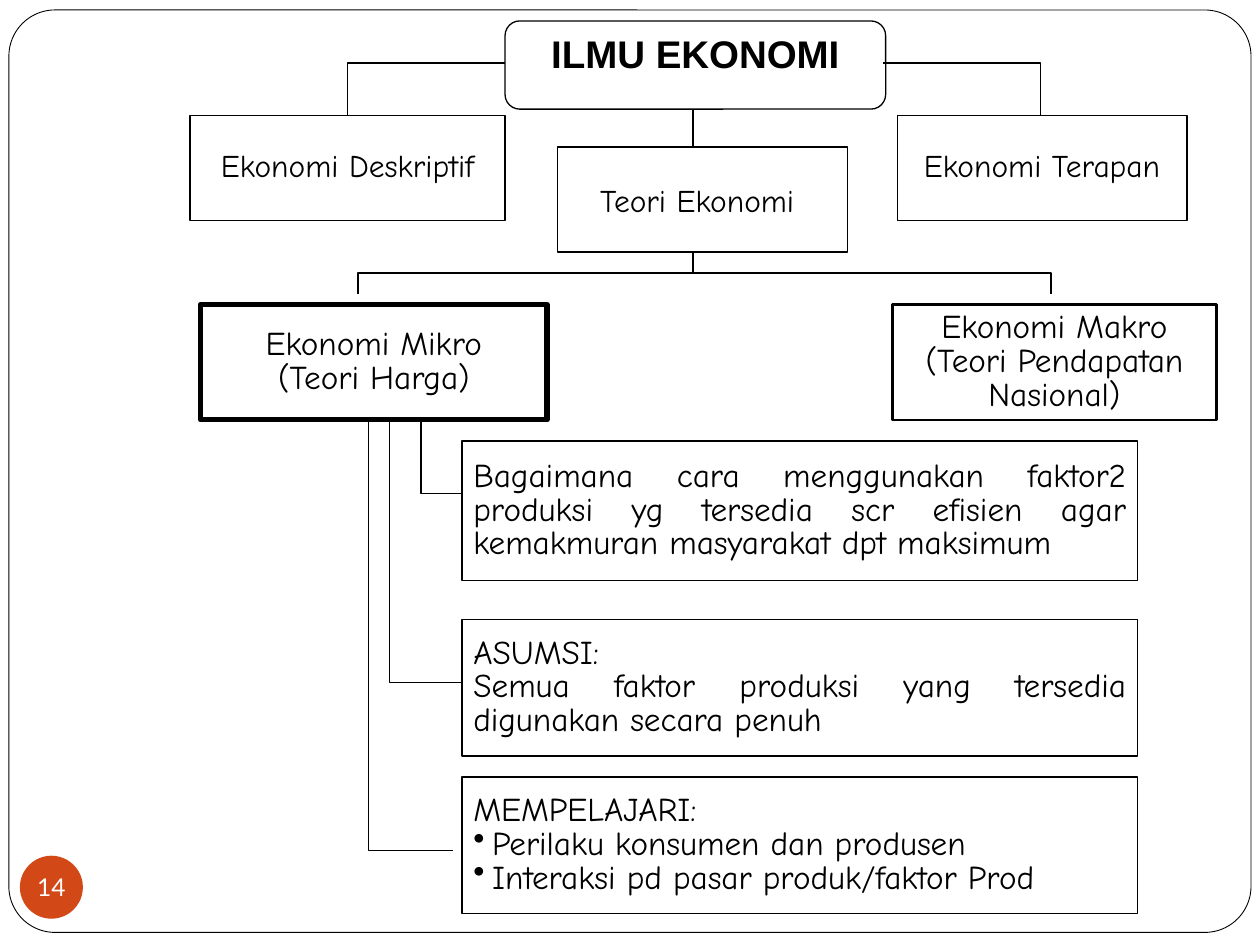
from lxml import etree
from pptx import Presentation
from pptx.dml.color import RGBColor
from pptx.enum.shapes import MSO_CONNECTOR, MSO_SHAPE
from pptx.enum.text import MSO_ANCHOR, PP_ALIGN
from pptx.oxml.ns import qn
from pptx.util import Inches, Pt

RECTANGLE, ROUNDED, OVAL = MSO_SHAPE.RECTANGLE, MSO_SHAPE.ROUNDED_RECTANGLE, MSO_SHAPE.OVAL
TOP, MIDDLE = MSO_ANCHOR.TOP, MSO_ANCHOR.MIDDLE
CENTER, JUSTIFY = PP_ALIGN.CENTER, PP_ALIGN.JUSTIFY

THEME = {
    "ink": RGBColor(0, 0, 0),
    "paper": RGBColor(255, 255, 255),
    "accent": RGBColor(0xD3, 0x48, 0x17),
    "title": ("Arial", 22),
    "branch": ("Comic Neue", 18),
    "topic": ("Comic Neue", 19),
    "number": ("Lato", 14),
    "tight": 0.85,
}

# Positions are in grid cells: the slide is 120 columns by 90 rows.
COLUMNS, ROWS = 120, 90
SLIDE_WIDTH, SLIDE_HEIGHT = Inches(10), Inches(7.5)

FRAME = (0.85, 0.95, 118.3, 87.85)
BADGE = (1.9, 81.5, 6, 6)
PAGE_NUMBER = "14"
ROOT = ("ILMU EKONOMI", (48.1, 2, 36.25, 8.4))
BULLET = "• "

# text lines, (column, row, width, height), line spacing
BRANCHES = [
    (["Ekonomi Deskriptif"], (18.1, 11, 30, 10), THEME["tight"]),
    (["Teori Ekonomi "], (53.1, 14, 27.6, 10), None),
    (["Ekonomi Terapan"], (85.45, 11, 27.6, 10), THEME["tight"]),
]
# text lines, (column, row, width, height), line width
THEORIES = [
    (["Ekonomi Mikro", "(Teori Harga)"], (19.1, 29, 33, 11), 3),
    (["Ekonomi Makro", "(Teori Pendapatan Nasional)"], (85, 29, 30.85, 11), 1.5),
]
# text lines, top row, height
DETAIL_COLUMN, DETAIL_WIDTH = 44, 64.35
DETAILS = [
    (["Bagaimana cara menggunakan faktor2 produksi yg tersedia scr efisien "
      "agar kemakmuran masyarakat dpt maksimum "], 42, 13.3),
    (["ASUMSI:", "Semua faktor produksi yang tersedia digunakan secara penuh"], 59, 13),
    (["MEMPELAJARI:", BULLET + "Perilaku konsumen dan produsen",
      BULLET + "Interaksi pd pasar produk/faktor Prod"], 74, 13),
]

STEM = ((66, 10), (66, 26))
ELBOWS = [
    [(33.1, 11), (33.1, 6), (48.1, 6)],
    [(99.1, 11), (99.1, 6), (84.1, 6)],
    [(34.1, 28), (34.1, 26), (100.1, 26), (100.1, 28)],
]
# column of the drop, row of the turn, column of the end
DROPS = [(40.1, 47, 44), (37.1, 65, 44), (35.1, 81, 43.1)]
ELBOWS += [[(column, 40), (column, row), (end, row)] for column, row, end in DROPS]


def across(columns):
    return round(SLIDE_WIDTH * columns / COLUMNS)


def down(rows):
    return round(SLIDE_HEIGHT * rows / ROWS)


def add_box(slide, preset, cell, fill="paper", line_width=None):
    left, top, width, height = cell
    shape = slide.shapes.add_shape(preset, across(left), down(top), across(width), down(height))
    shape.shadow.inherit = False
    shape.fill.solid()
    shape.fill.fore_color.rgb = THEME[fill]
    if line_width is None:
        shape.line.fill.background()
    else:
        shape.line.color.rgb = THEME["ink"]
        shape.line.width = Pt(line_width)
    return shape


def write(shape, lines, style, color="ink", alignment=CENTER, anchor=MIDDLE,
          spacing=None, bold=False):
    """Fill a shape with paragraphs; lines that start with BULLET become bullets."""
    frame = shape.text_frame
    frame.word_wrap = True
    frame.vertical_anchor = anchor
    frame.margin_left = frame.margin_right = Inches(0.09)
    frame.margin_top = frame.margin_bottom = Inches(0.04)
    frame.text = "\n".join(line.removeprefix(BULLET) for line in lines)
    has_bullets = any(line.startswith(BULLET) for line in lines)
    for line, paragraph in zip(lines, frame.paragraphs):
        paragraph.alignment = alignment
        if spacing:
            paragraph.line_spacing = spacing
        if has_bullets:
            properties = paragraph._p.get_or_add_pPr()
            properties.set("marL", str(Inches(0.15)))
            properties.set("indent", str(-Inches(0.15)))
            if line.startswith(BULLET):
                etree.SubElement(properties, qn("a:buChar")).set("char", BULLET.strip())
        font = paragraph.runs[0].font
        font.name, size = THEME[style]
        font.size = Pt(size)
        font.bold = bold
        font.color.rgb = THEME[color]


def add_stem(slide):
    (x1, y1), (x2, y2) = STEM
    stem = slide.shapes.add_connector(
        MSO_CONNECTOR.STRAIGHT, across(x1), down(y1), across(x2), down(y2))
    stem.line.color.rgb = THEME["ink"]
    stem.line.width = Pt(1)
    etree.SubElement(stem._element.spPr, qn("a:effectLst"))


def add_elbow(slide, points):
    start, *rest = [(across(x), down(y)) for x, y in points]
    builder = slide.shapes.build_freeform(*start)
    builder.add_line_segments(rest, close=False)
    elbow = builder.convert_to_shape()
    elbow.shadow.inherit = False
    elbow.fill.background()
    elbow.line.color.rgb = THEME["ink"]
    elbow.line.width = Pt(1)


def main():
    presentation = Presentation()
    presentation.slide_width, presentation.slide_height = SLIDE_WIDTH, SLIDE_HEIGHT
    slide = presentation.slides.add_slide(presentation.slide_layouts[6])

    frame = add_box(slide, ROUNDED, FRAME, line_width=0.5)
    frame.adjustments[0] = 0.05
    badge = add_box(slide, OVAL, BADGE, fill="accent")
    write(badge, [PAGE_NUMBER], "number", color="paper")
    badge.text_frame.word_wrap = False

    add_stem(slide)
    title, cell = ROOT
    root = add_box(slide, ROUNDED, cell, line_width=0.75)
    write(root, [title], "title", anchor=TOP, bold=True)
    root.text_frame.paragraphs[0].space_before = Pt(5.2)

    for lines, cell, spacing in BRANCHES:
        write(add_box(slide, RECTANGLE, cell, line_width=0.75), lines, "branch", spacing=spacing)
    for lines, cell, line_width in THEORIES:
        write(add_box(slide, RECTANGLE, cell, line_width=line_width), lines, "topic",
              spacing=THEME["tight"])
    for lines, row, height in DETAILS:
        cell = (DETAIL_COLUMN, row, DETAIL_WIDTH, height)
        write(add_box(slide, RECTANGLE, cell, line_width=1), lines, "topic",
              alignment=JUSTIFY, spacing=THEME["tight"])
    for points in ELBOWS:
        add_elbow(slide, points)

    presentation.save("out.pptx")


if __name__ == "__main__":
    main()
